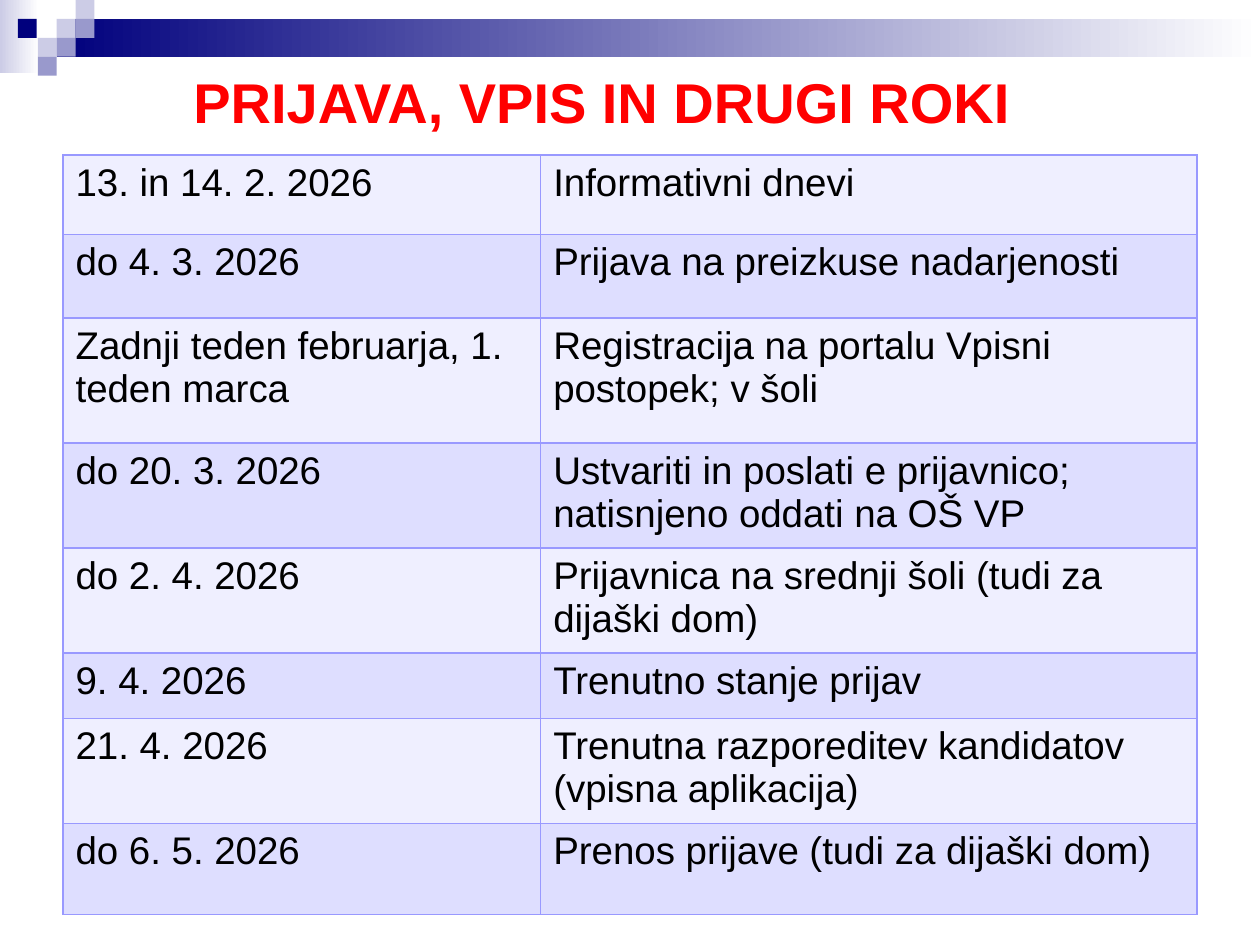
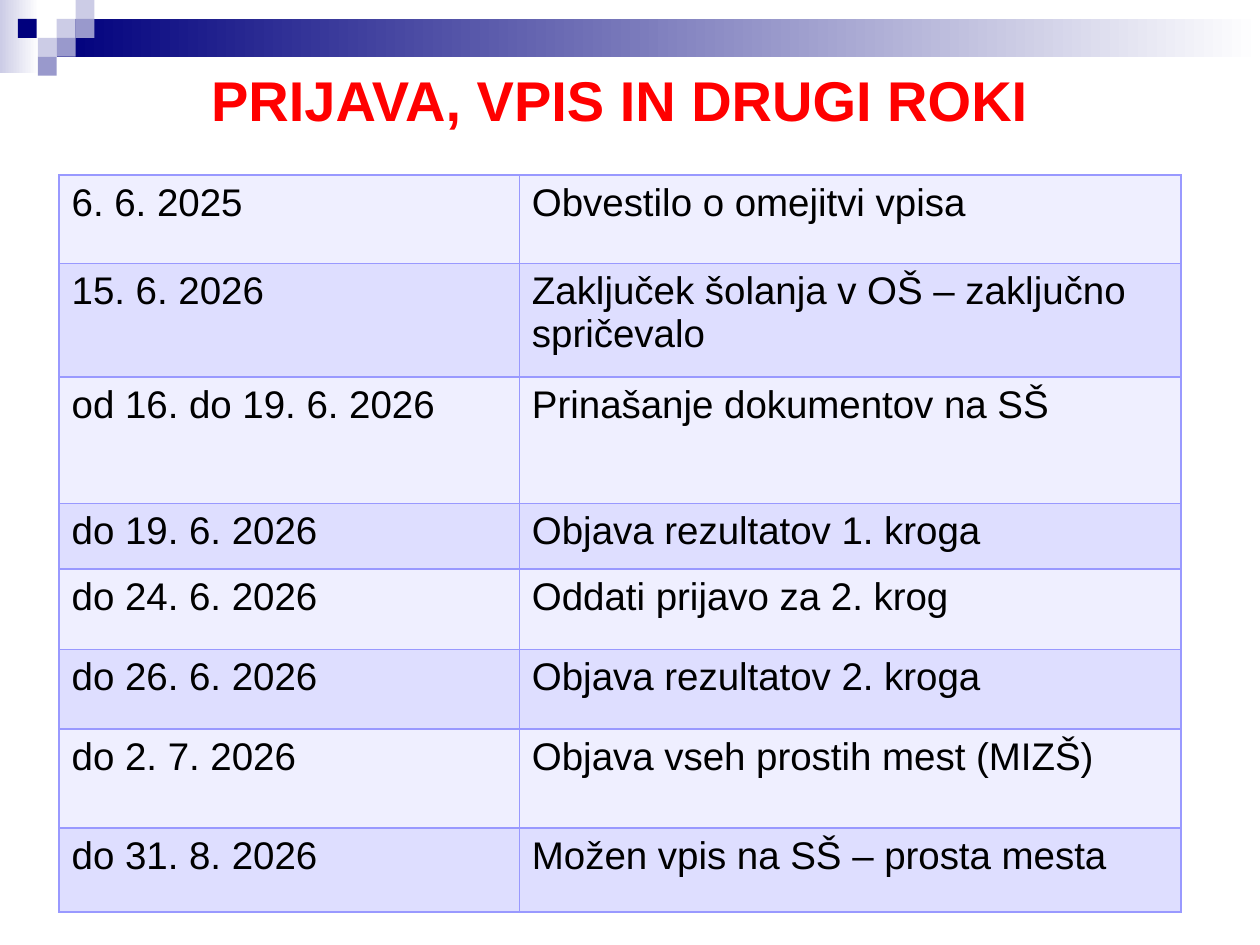
import pptx
import pptx.dml.color
import pptx.enum.shapes
import pptx.enum.text
import pptx.util
from lxml import etree
from pptx.oxml.ns import qn

Pt = pptx.util.Pt
RGBColor = pptx.dml.color.RGBColor

NAVY = RGBColor(0x00, 0x00, 0x7D)
PALE = RGBColor(0xCC, 0xCC, 0xE6)
LILAC = RGBColor(0x99, 0x99, 0xCC)
WHITE = RGBColor(0xFF, 0xFF, 0xFF)
RED = RGBColor(0xFF, 0x00, 0x00)
BLACK = RGBColor(0x00, 0x00, 0x00)
BORDER = RGBColor(0x99, 0x99, 0xFF)
ROW_FILLS = (RGBColor(0xEF, 0xEF, 0xFF), RGBColor(0xDE, 0xDE, 0xFF))

FONT = "Arial"
TITLE = "PRIJAVA, VPIS IN DRUGI ROKI"
TILE = 10.8
TILES = [
    (32.4, 10.8, PALE), (43.2, 0, PALE), (43.2, 10.8, LILAC),
    (21.6, 21.6, PALE), (10.2, 10.8, NAVY), (32.4, 21.6, LILAC),
    (21.6, 32.4, LILAC),
]

SPRING_DATES = [
    (45.4, "13. in 14. 2. 2026", "Informativni dnevi"),
    (47.7, "do 4. 3. 2026", "Prijava na preizkuse nadarjenosti"),
    (71.4, "Zadnji teden februarja, 1. teden marca",
     "Registracija na portalu Vpisni postopek; v šoli"),
    (56.5, "do 20. 3. 2026",
     "Ustvariti in poslati e prijavnico; natisnjeno oddati na OŠ VP"),
    (56.5, "do 2. 4. 2026", "Prijavnica na srednji šoli (tudi za dijaški dom)"),
    (37.4, "9. 4. 2026", "Trenutno stanje prijav"),
    (56.5, "21. 4. 2026", "Trenutna razporeditev kandidatov (vpisna aplikacija)"),
    (52, "do 6. 5. 2026", "Prenos prijave (tudi za dijaški dom)"),
]
SUMMER_DATES = [
    (50.5, "6. 6. 2025", "Obvestilo o omejitvi vpisa"),
    (64.8, "15. 6. 2026", "Zaključek šolanja v OŠ – zaključno spričevalo"),
    (72.5, "od 16. do 19. 6. 2026", "Prinašanje dokumentov na SŠ"),
    (37.4, "do 19. 6. 2026", "Objava rezultatov 1. kroga"),
    (46, "do 24. 6. 2026", "Oddati prijavo za 2. krog"),
    (45.4, "do 26. 6. 2026", "Objava rezultatov 2. kroga"),
    (56.5, "do 2. 7. 2026", "Objava vseh prostih mest (MIZŠ)"),
    (48, "do 31. 8. 2026", "Možen vpis na SŠ – prosta mesta"),
]


def add_rect(slide, left, top, width, height, color, fade=False):
    sp = slide.shapes.add_shape(
        pptx.enum.shapes.MSO_SHAPE.RECTANGLE,
        Pt(left), Pt(top), Pt(width), Pt(height))
    sp.shadow.inherit = False
    sp.line.fill.background()
    if fade:
        sp.fill.gradient()
        sp.fill.gradient_angle = 0
        for stop, position, rgb in zip(sp.fill.gradient_stops, (0, 1), (color, WHITE)):
            stop.position = position
            stop.color.rgb = rgb
    else:
        sp.fill.solid()
        sp.fill.fore_color.rgb = color


def add_header(slide):
    add_rect(slide, 0, 0, 22.3, 41.8, PALE, fade=True)
    add_rect(slide, 32.4, 10.8, 687.6, 21.6, NAVY, fade=True)
    for left, top, color in TILES:
        add_rect(slide, left, top, TILE, TILE, color)


def style_runs(p, size, color, bold=False):
    for r in p.runs:
        r.font.name = FONT
        r.font.size = Pt(size)
        r.font.bold = bold
        r.font.color.rgb = color


def add_title(slide, left, top):
    tf = slide.shapes.add_textbox(Pt(left), Pt(top), Pt(648), Pt(108)).text_frame
    tf.word_wrap = True
    tf.vertical_anchor = pptx.enum.text.MSO_ANCHOR.MIDDLE
    p = tf.paragraphs[0]
    p.text = TITLE
    p.alignment = pptx.enum.text.PP_ALIGN.CENTER
    style_runs(p, 32, RED, bold=True)


def set_borders(cell):
    props = cell._tc.get_or_add_tcPr()
    for i, side in enumerate(("a:lnL", "a:lnR", "a:lnT", "a:lnB")):
        line = etree.Element(qn(side), w=str(Pt(1)))
        fill = etree.SubElement(line, qn("a:solidFill"))
        etree.SubElement(fill, qn("a:srgbClr"), val=str(BORDER))
        props.insert(i, line)


def add_dates_table(slide, left, top, widths, rows):
    height = sum(row[0] for row in rows)
    table = slide.shapes.add_table(
        len(rows), len(widths), Pt(left), Pt(top), Pt(sum(widths)), Pt(height)).table
    table.first_row = False
    table.horz_banding = False
    for column, width in zip(table.columns, widths):
        column.width = Pt(width)
    for i, (row_height, *texts) in enumerate(rows):
        table.rows[i].height = Pt(row_height)
        for j, text in enumerate(texts):
            cell = table.cell(i, j)
            cell.text_frame.text = text
            style_runs(cell.text_frame.paragraphs[0], 22, BLACK)
            cell.fill.solid()
            cell.fill.fore_color.rgb = ROW_FILLS[i % 2]
            set_borders(cell)


def add_dates_slide(prs, title_at, table_at, widths, rows):
    s = prs.slides.add_slide(prs.slide_layouts[6])
    add_header(s)
    add_title(s, *title_at)
    add_dates_table(s, *table_at, widths, rows)


def main():
    prs = pptx.Presentation()
    prs.slide_width = Pt(720)
    prs.slide_height = Pt(540)
    add_dates_slide(prs, (20, 3.6), (36, 88.6), (273, 375), SPRING_DATES)
    add_dates_slide(prs, (30.2, 2.9), (33.8, 100.1), (263, 378), SUMMER_DATES)
    prs.save("out.pptx")


if __name__ == "__main__":
    main()
